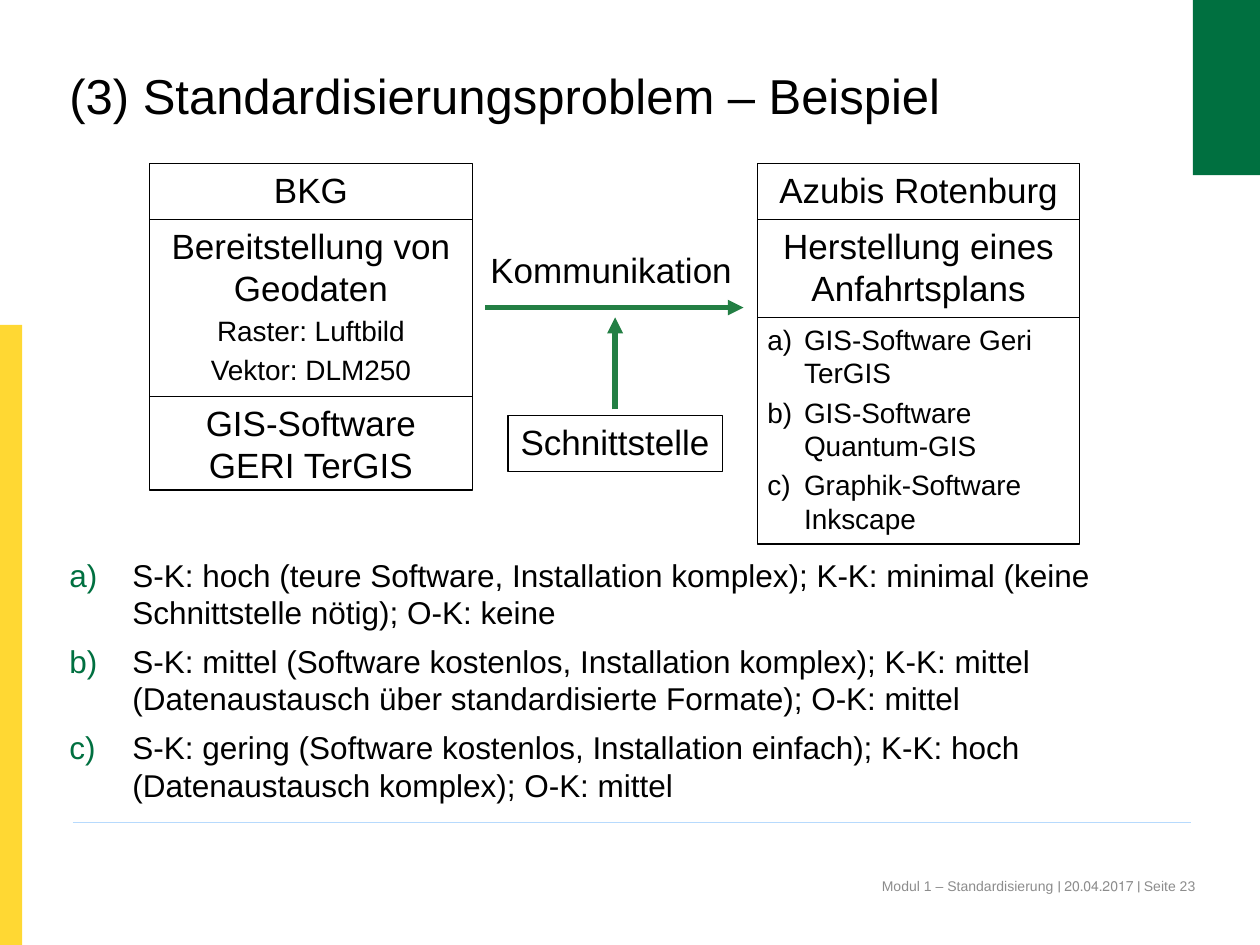
from lxml import etree
from pptx import Presentation
from pptx.dml.color import RGBColor
from pptx.enum.shapes import MSO_CONNECTOR, MSO_SHAPE
from pptx.enum.text import MSO_ANCHOR, PP_ALIGN
from pptx.oxml.ns import qn
from pptx.util import Cm, Pt

RECT, LINE = MSO_SHAPE.RECTANGLE, MSO_CONNECTOR.STRAIGHT
LEFT, MID, RIGHT = PP_ALIGN.LEFT, PP_ALIGN.CENTER, PP_ALIGN.RIGHT
TOP = MSO_ANCHOR.TOP
BLACK, GREEN, ARROW, YELLOW = "000000", "007040", "237F44", "FFD833"
GREY, PALE = "8C8C8C", "B7DAFD"

TITLE = "(3) Standardisierungsproblem – Beispiel"
FOOT = "Modul 1 – Standardisierung ׀ 20.04.2017 ׀ Seite 23"
COSTS = [
    "S-K: hoch (teure Software, Installation komplex); K-K: minimal "
    "(keine Schnittstelle nötig); O-K: keine",
    "S-K: mittel (Software kostenlos, Installation komplex); K-K: mittel "
    "(Datenaustausch über standardisierte Formate); O-K: mittel",
    "S-K: gering (Software kostenlos, Installation einfach); K-K: hoch "
    "(Datenaustausch komplex); O-K: mittel",
]
TOOLS = ["GIS-Software Geri TerGIS", "GIS-Software Quantum-GIS",
         "Graphik-Software Inkscape"]
# Each stack: left edge, then (height, paragraphs, format) from top to bottom
STACKS = [
    (3.02, [
        (1.12, ["BKG"], {}),
        (3.58, ["Bereitstellung von Geodaten", "Raster: Luftbild",
                "Vektor: DLM250"], {"sizes": [20, 16, 16]}),
        (1.88, ["GIS-Software\vGERI TerGIS"], {}),
    ]),
    (15.27, [
        (1.12, ["Azubis Rotenburg"], {}),
        (1.98, ["Herstellung eines Anfahrtsplans"], {}),
        (4.57, TOOLS, {"sizes": [16] * 3, "align": LEFT, "indent": 0.74}),
    ]),
]
STACK_TOP, STACK_W = 3.3, 6.5
BARS = [(0, 6.55, 0.45, 12.5, YELLOW), (24.05, -0.05, 1.35, 3.58, GREEN)]


def color(code):
    return RGBColor.from_string(code)


def number(para, indent, tint):
    """Number a paragraph a), b), c) with a hanging indent."""
    props = para._p.get_or_add_pPr()
    props.set("marL", str(Cm(indent)))
    props.set("indent", str(-Cm(indent)))
    fill = etree.SubElement(props, qn("a:buClr"))
    etree.SubElement(fill, qn("a:srgbClr"), val=tint)
    etree.SubElement(props, qn("a:buFont"), typeface="+mj-lt")
    etree.SubElement(props, qn("a:buAutoNum"), type="alphaLcParenR")


def write(shape, paras, sizes=(20,), align=MID, ink=BLACK, pad=(0.2, 0.1),
          indent=0, tint=BLACK, gap=None, lead=None, wrap=True):
    """Fill a shape with text; the gap before later paragraphs is 20 %."""
    frame = shape.text_frame
    frame.word_wrap, frame.vertical_anchor = wrap, TOP
    frame.margin_left = frame.margin_right = Cm(pad[0])
    frame.margin_top = frame.margin_bottom = Cm(pad[1])
    for i, (text, size) in enumerate(zip(paras, sizes)):
        para = frame.add_paragraph() if i else frame.paragraphs[0]
        para.text = text
        if indent:
            number(para, indent, tint)
        para.alignment = align
        para.space_before = Pt((gap or size * 0.2) if i else 0)
        if lead:
            para.line_spacing = Pt(lead)
        for run in para.runs:
            run.font.name, run.font.size = "Arial", Pt(size)
            run.font.color.rgb = color(ink)


def box(slide, x, y, w, h, fill=None):
    """Add a filled bar, or an outlined box when no fill is given."""
    shape = slide.shapes.add_shape(RECT, Cm(x), Cm(y), Cm(w), Cm(h))
    shape.shadow.inherit = False
    if fill:
        shape.fill.solid()
        shape.fill.fore_color.rgb = color(fill)
        shape.line.fill.background()
    else:
        shape.fill.background()
        shape.line.color.rgb = color(BLACK)
        shape.line.width = Pt(0.75)
    return shape


def label(slide, x, y, w, h, paras, **form):
    write(slide.shapes.add_textbox(Cm(x), Cm(y), Cm(w), Cm(h)), paras, **form)


def rule(slide, x1, y1, x2, y2, ink, width, head=False):
    line = slide.shapes.add_connector(LINE, Cm(x1), Cm(y1), Cm(x2), Cm(y2))
    line.line.color.rgb = color(ink)
    line.line.width = Pt(width)
    if head:
        etree.SubElement(line.line._get_or_add_ln(), qn("a:tailEnd"),
                         type="triangle")
    etree.SubElement(line._element.spPr, qn("a:effectLst"))


def main():
    deck = Presentation()
    deck.slide_width, deck.slide_height = Cm(25.4), Cm(19.05)
    slide = deck.slides.add_slide(deck.slide_layouts[5])

    for *place, fill in BARS:
        box(slide, *place, fill=fill)
    label(slide, 12.7, 17.7, 11.4, 1.02, [FOOT], sizes=[8], align=RIGHT,
          ink=GREY, pad=(0, 0))
    rule(slide, 1.47, 16.57, 24, 16.57, PALE, 0.5)

    title = slide.shapes.title
    title.left, title.top = Cm(1.4), Cm(1.35)
    title.width, title.height = Cm(20.93), Cm(2.57)
    write(title, [TITLE], sizes=[28], align=LEFT, pad=(0, 0), lead=33)

    label(slide, 1.4, 11.2, 22.66, 5.1, COSTS, sizes=[18] * 3, align=LEFT,
          pad=(0, 0), indent=1.27, tint=GREEN, gap=6)

    for x, cells in STACKS:
        y = STACK_TOP
        for h, paras, form in cells:
            write(box(slide, x, y, STACK_W, h), paras, **form)
            y += h

    label(slide, 9.68, 4.9, 5.28, 1.12, ["Kommunikation"], wrap=False)
    write(box(slide, 10.24, 8.38, 4.32, 1.12), ["Schnittstelle"])
    rule(slide, 9.78, 6.2, 14.99, 6.2, ARROW, 3, head=True)
    rule(slide, 12.4, 8.25, 12.4, 6.4, ARROW, 3, head=True)

    deck.save("out.pptx")


if __name__ == "__main__":
    main()
